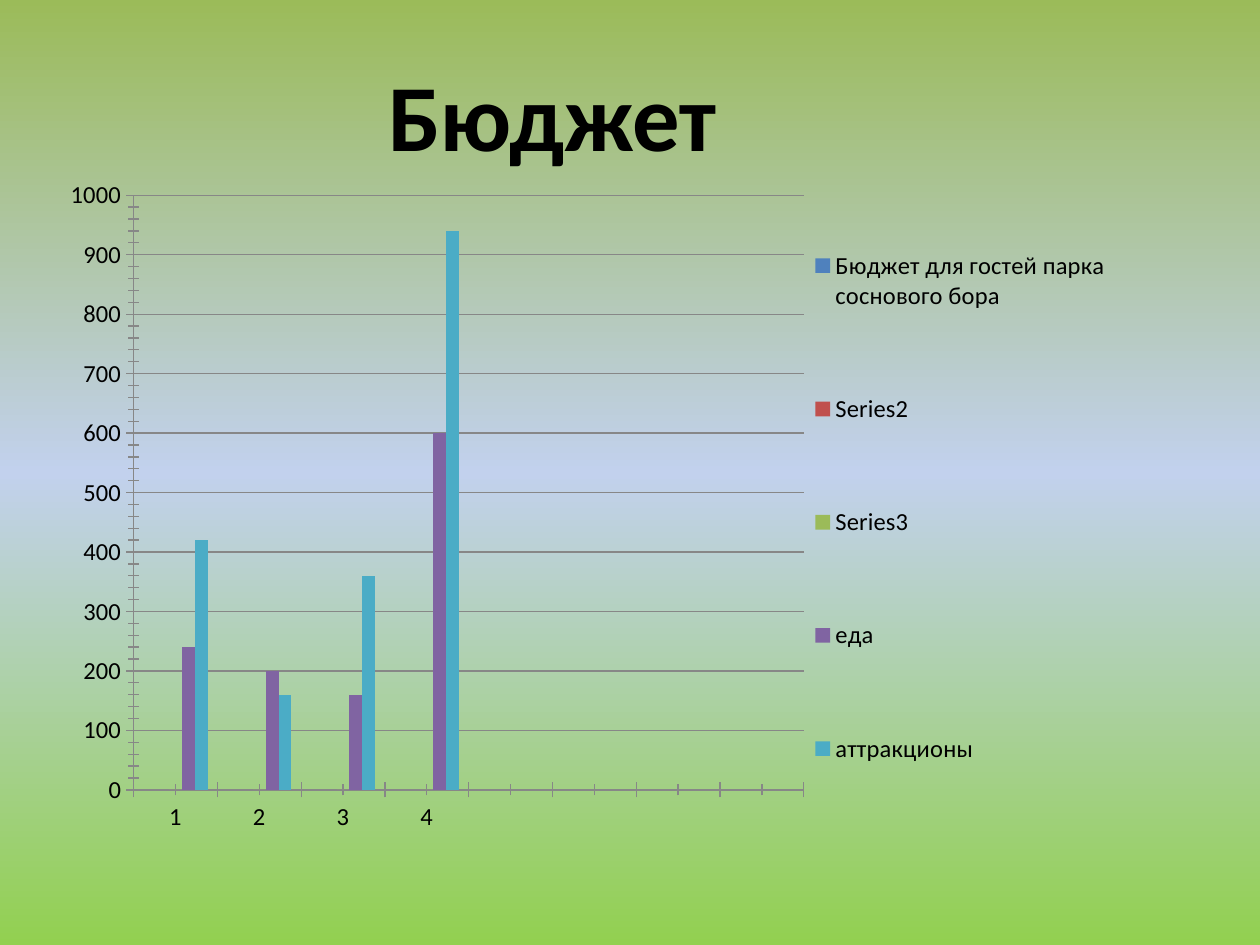
from copy import deepcopy

from lxml import etree
from pptx import Presentation
from pptx.chart.data import CategoryChartData
from pptx.dml.color import RGBColor
from pptx.enum import chart as ch, text
from pptx.oxml.ns import qn
from pptx.util import Inches, Pt

BLACK = RGBColor(0x00, 0x00, 0x00)
GRID_GRAY = RGBColor(0x87, 0x87, 0x87)
BLUE = RGBColor(0x4F, 0x81, 0xBD)
RED = RGBColor(0xC0, 0x50, 0x4D)
GREEN = RGBColor(0x9B, 0xBB, 0x59)
PURPLE = RGBColor(0x80, 0x64, 0xA2)
AQUA = RGBColor(0x4B, 0xAC, 0xC6)
PALE_BLUE = RGBColor(0xC2, 0xD1, 0xED)
LIME = RGBColor(0x92, 0xD0, 0x50)

FONT = "Calibri"
CHART_WIDTH, CHART_HEIGHT = 8.67, 5.39
CATEGORIES = ["1", "2", "3", "4", "", "", "", ""]
EMPTY = [None] * 4
BUDGET = [
    ("Бюджет для гостей парка соснового бора", EMPTY + EMPTY, BLUE),
    ("", EMPTY + EMPTY, RED),
    ("", [0, 0, 0, 0] + EMPTY, GREEN),
    ("еда", [240, 200, 160, 600] + EMPTY, PURPLE),
    ("аттракционы", [420, 160, 360, 940] + EMPTY, AQUA),
]


def paint_background(slide, colors):
    """Vertical gradient with evenly spaced stops."""
    fill = slide.background.fill
    fill.gradient()
    fill.gradient_angle = 270
    stop_list = slide.element.find(".//" + qn("a:gsLst"))
    stop_list.insert(1, deepcopy(stop_list[0]))
    for i, (stop, color) in enumerate(zip(fill.gradient_stops, colors)):
        stop.color.rgb = color
        stop.position = i / (len(colors) - 1)


def add_title(slide, wording):
    title = slide.shapes.title
    title.left, title.top = Inches(2.97), Inches(0.4)
    title.width, title.height = Inches(2.83), Inches(1.01)
    frame = title.text_frame
    frame.text = wording
    frame.word_wrap = False
    frame.auto_size = text.MSO_AUTO_SIZE.SHAPE_TO_FIT_TEXT
    frame.vertical_anchor = text.MSO_ANCHOR.TOP
    paragraph = frame.paragraphs[0]
    paragraph.alignment = text.PP_ALIGN.CENTER
    font = paragraph.font
    font.name, font.size, font.bold = FONT, Pt(54), True
    font.color.rgb = BLACK


def place(part, position, x, y, w, h, inner=False):
    """Fix a chart part, in inches from the chart's corner."""
    for old in part.findall(qn("c:layout")):
        part.remove(old)
    layout = etree.Element(qn("c:layout"))
    part.insert(position, layout)
    manual = etree.SubElement(layout, qn("c:manualLayout"))
    settings = [("layoutTarget", "inner")] if inner else []
    settings += [("xMode", "edge"), ("yMode", "edge"),
                 ("x", x / CHART_WIDTH), ("y", y / CHART_HEIGHT),
                 ("w", w / CHART_WIDTH), ("h", h / CHART_HEIGHT)]
    for tag, value in settings:
        etree.SubElement(manual, qn("c:" + tag)).set("val", str(value))


def drop_blanks(chart):
    """Leave unnamed series, blank categories and axis flags undefined."""
    for series in chart.plots[0].series:
        element = series.format.fill and series._element
        if not series.name:
            element.remove(element.find(qn("c:tx")))
        for point in element.findall(".//" + qn("c:cat") + "//" + qn("c:pt")):
            if not point.findtext(qn("c:v")):
                point.getparent().remove(point)
    for flag in chart.element.findall(".//" + qn("c:delete")):
        flag.getparent().remove(flag)


def style_axis(axis):
    axis.major_tick_mark = axis.minor_tick_mark = ch.XL_TICK_MARK.CROSS
    axis.format.line.color.rgb = GRID_GRAY
    axis.format.line.width = Pt(0.75)


def add_budget_chart(slide):
    data = CategoryChartData()
    data.categories = CATEGORIES
    for name, values, _ in BUDGET:
        data.add_series(name, values)
    chart = slide.shapes.add_chart(
        ch.XL_CHART_TYPE.COLUMN_CLUSTERED, Inches(0.39), Inches(1.33),
        Inches(CHART_WIDTH), Inches(CHART_HEIGHT), data).chart
    chart.has_title = False
    chart.font.name, chart.font.size = FONT, Pt(14)
    chart.font.color.rgb = BLACK

    # Columns
    plot = chart.plots[0]
    plot.vary_by_categories = False
    plot.gap_width, plot.overlap = 150, 0
    for series, (_, _, color) in zip(plot.series, BUDGET):
        series.format.fill.solid()
        series.format.fill.fore_color.rgb = color
        series.invert_if_negative = False

    # Axes and gridlines
    style_axis(chart.category_axis)
    amounts = chart.value_axis
    style_axis(amounts)
    amounts.minimum_scale, amounts.maximum_scale = 0, 1000
    amounts.major_unit, amounts.minor_unit = 100, 20
    amounts.has_major_gridlines = True
    amounts.major_gridlines.format.line.color.rgb = GRID_GRAY
    amounts.major_gridlines.format.line.width = Pt(0.75)

    # Legend
    chart.has_legend = True
    legend = chart.legend
    legend.position = ch.XL_LEGEND_POSITION.RIGHT
    legend.include_in_layout = True
    legend.font.name, legend.font.size = FONT, Pt(14)
    legend.font.color.rgb = BLACK

    # Plot area and legend positions
    place(chart.element.find(".//" + qn("c:plotArea")), 0,
          0.67, 0.22, 5.32, 4.72, inner=True)
    place(chart.element.find(".//" + qn("c:legend")), 1,
          5.98, 0, 2.5, CHART_HEIGHT)
    drop_blanks(chart)


def main():
    deck = Presentation()
    deck.slide_width, deck.slide_height = Inches(10), Inches(7.5)
    slide = deck.slides.add_slide(deck.slide_layouts[5])
    paint_background(slide, [GREEN, PALE_BLUE, LIME])
    add_title(slide, "Бюджет")
    add_budget_chart(slide)
    deck.save("out.pptx")


if __name__ == "__main__":
    main()
